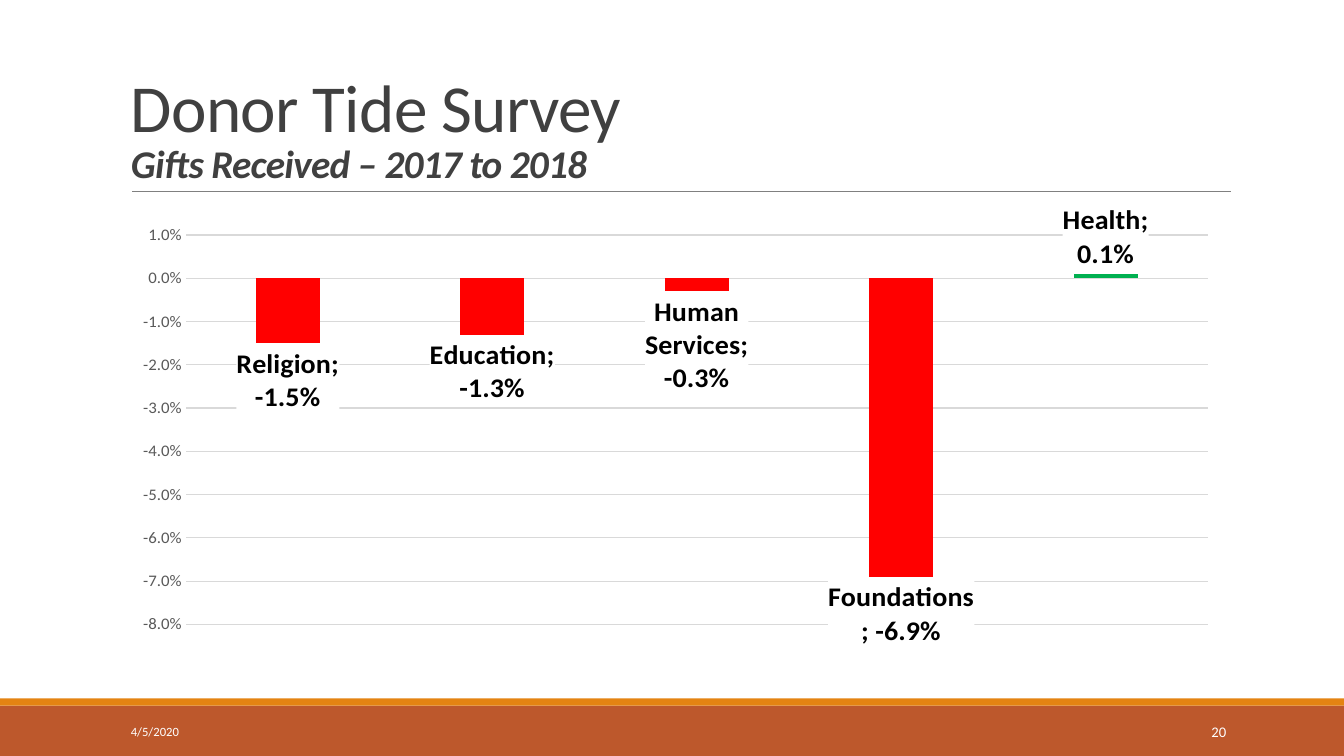
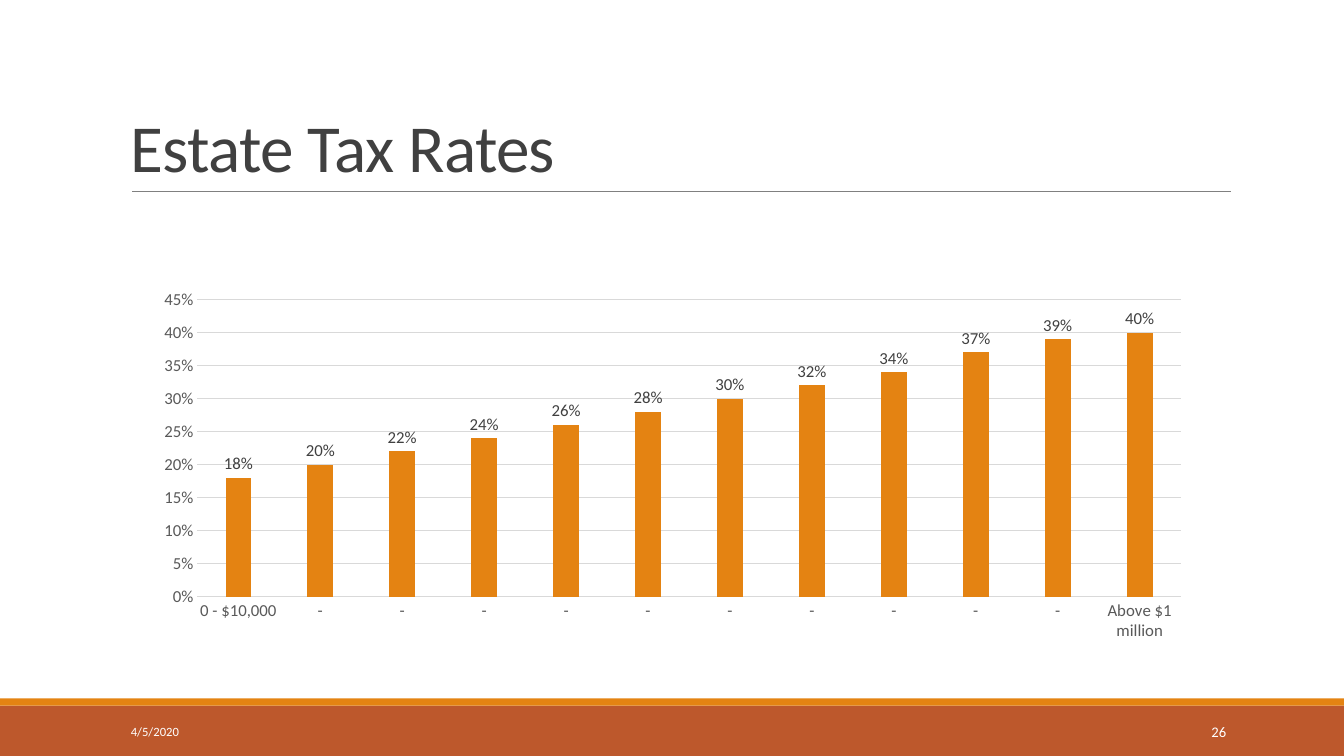
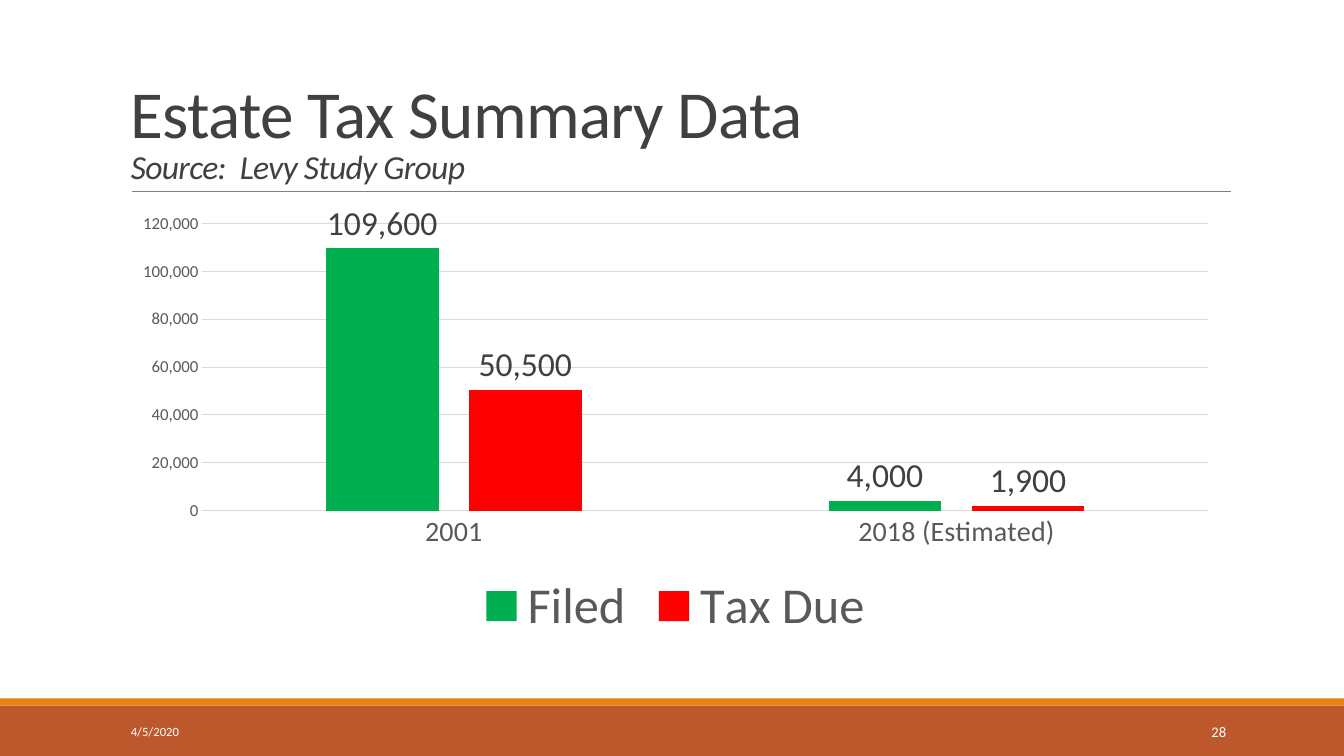
from dataclasses import dataclass

from lxml import etree
from pptx import Presentation, util as u
from pptx.chart.data import CategoryChartData
from pptx.dml.color import RGBColor
from pptx.enum import chart as ch, shapes, text
from pptx.oxml import parse_xml
from pptx.oxml.ns import nsdecls, qn


@dataclass(frozen=True)
class Theme:
    font: str = "Calibri"
    # Colours
    brick: str = "BD582C"
    orange: str = "E48312"
    rule: str = "808080"
    dark: str = "404040"
    axis: str = "595959"
    grid: str = "D9D9D9"
    black: str = "000000"
    white: str = "FFFFFF"
    red: str = "FF0000"
    green: str = "00B050"
    # Type sizes
    title_size: float = 48
    axis_size: float = 12
    legend_size: float = 36
    date_size: float = 9
    number_size: float = 10.5


T = Theme()
WIDTH, HEIGHT = 13.33, 7.5
MARGIN, COLUMN = 1.2, 11
BAND_TOP, STRIPE = 7, 0.07
RULE_Y = 1.9
FULL_CHART = (MARGIN, 2.02, COLUMN, 4.4)
DATE = "4/5/2020"

# Content
SLIDES = [
    dict(
        number="20",
        title="Donor Tide Survey",
        subtitle=("Gifts Received – 2017 to 2018", dict(size=28, bold=True)),
        box=FULL_CHART,
        categories=["Religion", "Education", "Human Services", "Foundations", "Health"],
        series=[("Series 1", [-0.015, -0.013, -0.003, -0.069, 0.001], T.red)],
        point_colors={4: T.green},
        scale=(-0.08, 0.01, 0.01),
        number_format="0.0%",
        label=dict(size=20, color=T.black, bold=True),
        boxed_names=True,
    ),
    dict(
        number="26",
        title="Estate Tax Rates",
        box=(1.42, 2.8, 10.5, 3.63),
        categories=["0 - $10,000"] + ["-"] * 10 + ["Above $1 million"],
        series=[("Series 1", [0.18, 0.2, 0.22, 0.24, 0.26, 0.28, 0.3, 0.32,
                              0.34, 0.37, 0.39, 0.4], T.orange)],
        scale=(0, 0.45, 0.05),
        number_format="0%",
        label=dict(size=12, color=T.dark),
        category_size=12,
    ),
    dict(
        number="28",
        title="Estate Tax Summary Data",
        subtitle=("Source:  Levy Study Group", dict(size=24)),
        box=FULL_CHART,
        categories=["2001", "2018 (Estimated)"],
        series=[("Filed", [109600, 4000], T.green),
                ("Tax Due", [50500, 1900], T.red)],
        scale=(0, 120000, 20000),
        number_format="#,##0",
        label=dict(size=24, color=T.dark),
        category_size=20,
        legend=True,
    ),
]


def inches(*lengths):
    return [u.Inches(length) for length in lengths]


def paint(fill, color):
    fill.solid()
    fill.fore_color.rgb = RGBColor.from_string(color)


def style(font, size, color, bold=False, italic=False):
    font.name, font.size = T.font, u.Pt(size)
    font.bold, font.italic = bold, italic
    font.color.rgb = RGBColor.from_string(color)


def draw_line(line, color, width):
    line.width = u.Pt(width)
    line.color.rgb = RGBColor.from_string(color)


def add_text(slide, box, anchor):
    frame = slide.shapes.add_textbox(*inches(*box)).text_frame
    frame.word_wrap = True
    frame.vertical_anchor = anchor
    return frame.paragraphs[0]


def add_frame(slide, number):
    """Bands, title rule, date and slide number."""
    for top, height, color in ((BAND_TOP, HEIGHT - BAND_TOP, T.brick),
                               (BAND_TOP - STRIPE, STRIPE, T.orange)):
        band = slide.shapes.add_shape(shapes.MSO_SHAPE.RECTANGLE,
                                      *inches(0, top, WIDTH, height))
        band.shadow.inherit = False
        paint(band.fill, color)
        band.line.fill.background()

    rule = slide.shapes.add_connector(shapes.MSO_CONNECTOR.STRAIGHT,
                                      *inches(1.31, RULE_Y, 12.21, RULE_Y))
    draw_line(rule.line, T.rule, 0.5)
    etree.SubElement(rule._element.spPr, qn("a:effectLst"))

    for words, left, width, size, align in (
            (DATE, MARGIN, 2.7, T.date_size, text.PP_ALIGN.LEFT),
            (number, 10.83, 1.43, T.number_size, text.PP_ALIGN.RIGHT)):
        footer = add_text(slide, (left, 7.06, width, 0.4), text.MSO_ANCHOR.MIDDLE)
        footer.text, footer.alignment = words, align
        style(footer.font, size, T.white)


def add_title(slide, title, subtitle=None):
    heading = add_text(slide, (MARGIN, 0.31, COLUMN, RULE_Y - 0.31),
                       text.MSO_ANCHOR.BOTTOM)
    heading.line_spacing = 0.85
    lines = [(title, dict(size=T.title_size))]
    if subtitle:
        words, look = subtitle
        lines.append((words, dict(look, italic=True)))
    for i, (words, look) in enumerate(lines):
        if i:
            heading.add_line_break()
        run = heading.add_run()
        run.text = words
        style(run.font, color=T.dark, **look)
        run.font._element.set("spc", "-50")


def box_names(labels):
    """Show category names too, on white boxes."""
    labels.show_category_name = True
    element = labels._element
    element.find(qn("c:txPr")).addprevious(parse_xml(
        f'<c:spPr {nsdecls("c", "a")}><a:solidFill><a:srgbClr val="{T.white}"/>'
        '</a:solidFill></c:spPr>'))
    separator = etree.Element(qn("c:separator"))
    separator.text = "; "
    element.find(qn("c:showBubbleSize")).addnext(separator)


def add_columns(slide, content):
    data = CategoryChartData(number_format=content["number_format"])
    data.categories = content["categories"]
    for name, values, _ in content["series"]:
        data.add_series(name, values)
    chart = slide.shapes.add_chart(ch.XL_CHART_TYPE.COLUMN_CLUSTERED,
                                   *inches(*content["box"]), data).chart
    chart.has_title = False
    style(chart.font, T.axis_size, T.black)

    # Columns and their labels
    plot = chart.plots[0]
    plot.gap_width, plot.overlap, plot.vary_by_categories = 219, -27, False
    for series, (_, _, color) in zip(plot.series, content["series"]):
        series.invert_if_negative = False
        paint(series.format.fill, color)
        for index, point_color in content.get("point_colors", {}).items():
            paint(series.points[index].format.fill, point_color)
        labels = series.data_labels
        labels.show_value = True
        labels.number_format = content["number_format"]
        labels.number_format_is_linked = False
        labels.position = ch.XL_LABEL_POSITION.OUTSIDE_END
        style(labels.font, **content["label"])
        if content.get("boxed_names"):
            box_names(labels)

    # Axes
    values, categories = chart.value_axis, chart.category_axis
    values.minimum_scale, values.maximum_scale, values.major_unit = content["scale"]
    values.has_major_gridlines = True
    draw_line(values.major_gridlines.format.line, T.grid, 0.75)
    values.format.line.fill.background()
    values.tick_labels.number_format = content["number_format"]
    values.tick_labels.number_format_is_linked = False
    style(values.tick_labels.font, T.axis_size, T.axis)
    for axis in (values, categories):
        axis.major_tick_mark = axis.minor_tick_mark = ch.XL_TICK_MARK.NONE
    if "category_size" in content:
        draw_line(categories.format.line, T.grid, 0.75)
        style(categories.tick_labels.font, content["category_size"], T.axis)
    else:
        categories.visible = False

    # Legend
    chart.has_legend = content.get("legend", False)
    if chart.has_legend:
        chart.legend.position = ch.XL_LEGEND_POSITION.BOTTOM
        chart.legend.include_in_layout = False
        style(chart.legend.font, T.legend_size, T.axis)


def main():
    prs = Presentation()
    prs.slide_width, prs.slide_height = inches(WIDTH, HEIGHT)
    for content in SLIDES:
        slide = prs.slides.add_slide(prs.slide_layouts[6])
        add_frame(slide, content["number"])
        add_title(slide, content["title"], content.get("subtitle"))
        add_columns(slide, content)
    prs.save("out.pptx")


if __name__ == "__main__":
    main()
